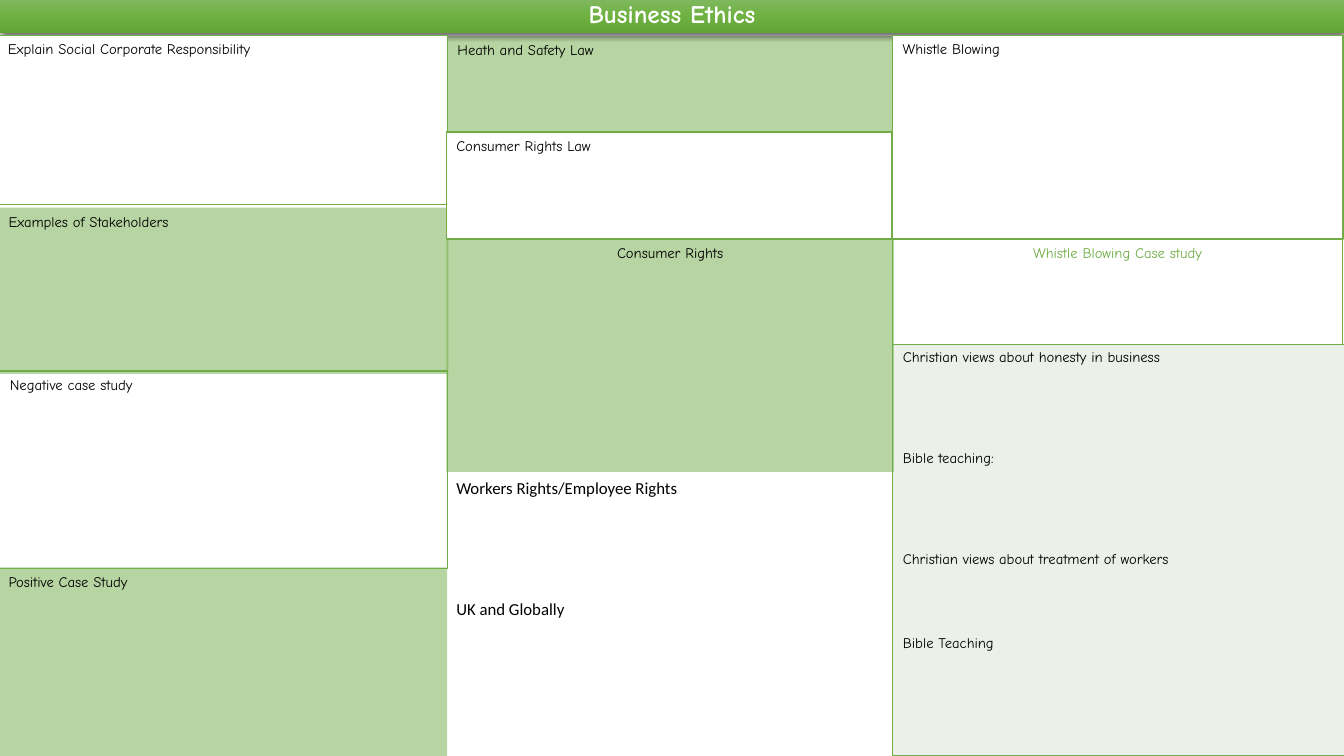
"""Build the Business Ethics revision grid slide."""
from lxml import etree
from pptx import Presentation
from pptx.dml.color import RGBColor
from pptx.enum.shapes import MSO_SHAPE
from pptx.enum.text import MSO_ANCHOR, MSO_AUTO_SIZE, PP_ALIGN
from pptx.oxml import parse_xml
from pptx.oxml.ns import nsdecls, qn
from pptx.util import Cm, Pt

RECT = MSO_SHAPE.RECTANGLE
TOP, MIDDLE = MSO_ANCHOR.TOP, MSO_ANCHOR.MIDDLE
LEFT, CENTER = PP_ALIGN.LEFT, PP_ALIGN.CENTER
NO_FIT = MSO_AUTO_SIZE.NONE
FIT_SHAPE = MSO_AUTO_SIZE.SHAPE_TO_FIT_TEXT
TITLE_ONLY = 5

COLORS = {
    "green": "70AD47",
    "white": "FFFFFF",
    "black": "000000",
    "pale": "EBF1E9",
    "bar_top": "81B861",
    "bar_middle": "6FB242",
    "bar_bottom": "62A336",
}
COMIC, CALIBRI = "Comic Neue", "Calibri"


def rgb(name):
    """Return the named colour."""
    return RGBColor.from_string(COLORS[name])


def style(p, size=10.5, color="black", font=COMIC, align=LEFT):
    """Set the font and alignment of a paragraph."""
    p.alignment = align
    p.font.size = Pt(size)
    p.font.name = font
    p.font.color.rgb = rgb(color)


def write_prompts(tf, prompts, **look):
    """Write (text, space before) prompts as styled paragraphs."""
    for i, (text, gap) in enumerate(prompts):
        p = tf.add_paragraph() if i else tf.paragraphs[0]
        p.text = text
        if gap:
            p.space_before = Pt(gap)
        style(p, **look)


def add_panel(s, text, box, fill=None, line=None, color="black", align=LEFT):
    """Add a headed panel; green fills are half transparent."""
    sp = s.shapes.add_shape(RECT, *map(Cm, box))
    sp.shadow.inherit = False
    if fill:
        sp.fill.solid()
        sp.fill.fore_color.rgb = rgb(fill)
    else:
        sp.fill.background()
    if fill == "green":
        srgb = sp.fill._xPr.find(".//" + qn("a:srgbClr"))
        etree.SubElement(srgb, qn("a:alpha"), val="50000")
    if line:
        sp.line.color.rgb = rgb("green")
        sp.line.width = Pt(line)
    else:
        sp.line.fill.background()
    tf = sp.text_frame
    tf.word_wrap = True
    tf.vertical_anchor = TOP
    write_prompts(tf, [(text, 0)], color=color, align=align)


def add_title(s, text, box):
    """Turn the title placeholder into a gradient bar in front of earlier panels."""
    title = s.shapes.title
    title.left, title.top, title.width, title.height = map(Cm, box)
    stops = "".join(
        f'<a:gs pos="{pos}"><a:srgbClr val="{COLORS[name]}"/></a:gs>'
        for pos, name in ((0, "bar_top"), (50000, "bar_middle"), (100000, "bar_bottom")))
    props = title._element.spPr
    props.append(parse_xml(
        f'<a:gradFill {nsdecls("a")} rotWithShape="1"><a:gsLst>{stops}</a:gsLst>'
        '<a:lin ang="5400000" scaled="0"/></a:gradFill>'))
    props.append(parse_xml(
        f'<a:effectLst {nsdecls("a")}><a:outerShdw blurRad="{Pt(4.5)}" dist="{Pt(1.5)}" '
        f'dir="5400000" algn="ctr" rotWithShape="0"><a:srgbClr val="{COLORS["black"]}">'
        '<a:alpha val="63000"/></a:srgbClr></a:outerShdw></a:effectLst>'))
    tf = title.text_frame
    tf.text = text
    tf.word_wrap = True
    tf.auto_size = NO_FIT
    tf.vertical_anchor = MIDDLE
    p = tf.paragraphs[0]
    style(p, size=18, color="white", align=CENTER)
    p.font.bold = True
    p.line_spacing = 0.9
    s.shapes._spTree.append(title._element)


def add_views_table(s, prompts, box):
    """Add the one-cell table of Christian views with green borders."""
    frame = s.shapes.add_table(1, 1, *map(Cm, box))
    table = frame.table
    table.first_row = table.horz_banding = False
    cell = table.cell(0, 0)
    write_prompts(cell.text_frame, prompts)
    props = cell._tc.get_or_add_tcPr()
    for side in ("L", "R", "T", "B"):
        props.append(parse_xml(
            f'<a:ln{side} {nsdecls("a")} w="{Pt(1)}"><a:solidFill>'
            f'<a:srgbClr val="{COLORS["green"]}"/></a:solidFill></a:ln{side}>'))
    cell.fill.solid()
    cell.fill.fore_color.rgb = rgb("pale")


def add_text(s, prompts, box):
    """Add a plain text box of prompts."""
    tf = s.shapes.add_textbox(*map(Cm, box)).text_frame
    tf.word_wrap = True
    tf.auto_size = FIT_SHAPE
    write_prompts(tf, prompts, size=12, font=CALIBRI)


def main():
    """Build and save the slide."""
    prs = Presentation()
    prs.slide_width, prs.slide_height = Cm(33.87), Cm(19.05)
    s = prs.slides.add_slide(prs.slide_layouts[TITLE_ONLY])

    add_panel(s, "Heath and Safety Law", (11.28, 0.91, 11.23, 2.44), "green")
    add_panel(s, "Whistle Blowing Case study", (22.5, 6.02, 11.33, 3.33),
              line=0.75, color="green", align=CENTER)
    add_title(s, "Business Ethics", (0, -0.05, 33.87, 0.89))
    add_panel(s, "Explain Social Corporate Responsibility",
              (-0.05, 0.89, 11.33, 4.27), "white", 1)
    add_panel(s, "Examples of Stakeholders", (-0.03, 5.23, 11.33, 4.19), "green")
    add_panel(s, "Whistle Blowing", (22.5, 0.89, 11.35, 5.13), "white", 1)
    add_panel(s, "Positive Case Study", (-0.03, 14.3, 11.3, 4.75), "green")
    add_views_table(s, [
        ("Christian views about honesty in business", 0),
        ("Bible teaching:", 60),
        ("Christian views about treatment of workers", 60),
        ("Bible Teaching", 48),
    ], (22.5, 8.69, 11.43, 10.36))
    add_panel(s, "Negative case study", (0, 9.35, 11.28, 4.98), line=0.75)
    add_panel(s, "Consumer Rights", (11.25, 6.02, 11.28, 5.87), "green", align=CENTER)
    add_panel(s, "Consumer Rights Law", (11.25, 3.33, 11.23, 2.69), "white", 1)
    add_text(s, [("Workers Rights/Employee Rights", 0), ("UK and Globally", 72)],
             (11.25, 11.91, 6.86, 3.84))
    prs.save("out.pptx")


if __name__ == "__main__":
    main()
